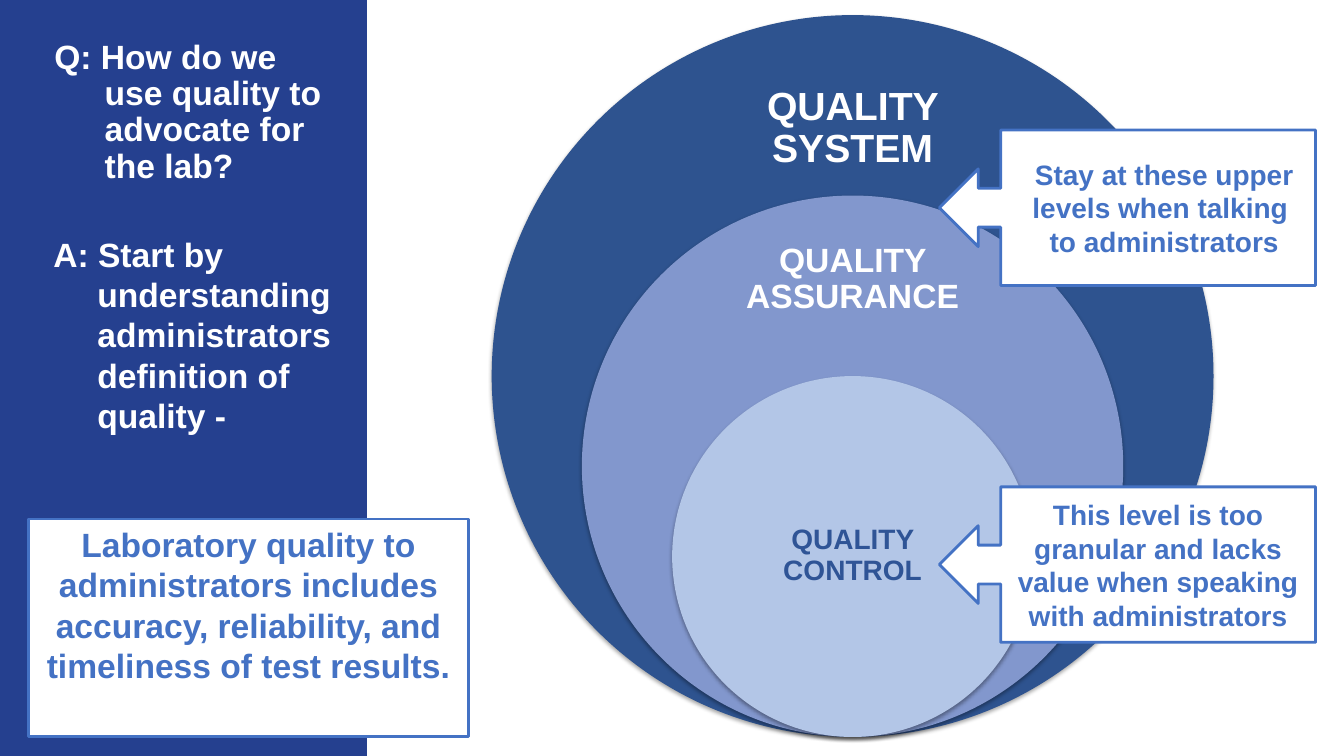
from lxml import etree
from pptx import Presentation, util as u
from pptx.dml.color import RGBColor
from pptx.enum import shapes, text
from pptx.oxml import ns

NAVY = RGBColor(0x25, 0x40, 0x8F)
BLUE = RGBColor(0x44, 0x72, 0xC4)
DEEP = RGBColor(0x2E, 0x53, 0x8F)
PERIWINKLE = RGBColor(0x82, 0x97, 0xCD)
PALE = RGBColor(0xB3, 0xC6, 0xE7)
LABEL_BLUE = RGBColor(0x2F, 0x54, 0x96)
WHITE = RGBColor(0xFF, 0xFF, 0xFF)
BLACK = RGBColor(0, 0, 0)

MIDDLE, TOP = text.MSO_ANCHOR.MIDDLE, text.MSO_ANCHOR.TOP
CENTER, LEFT = text.PP_ALIGN.CENTER, text.PP_ALIGN.LEFT


class SlideBuilder:
    font = "Arial"
    line_width = 2

    def __init__(self, slide):
        self.slide = slide

    def shape(self, kind, box, fill, line=None):
        shape = self.slide.shapes.add_shape(kind, *map(u.Pt, box))
        shape.shadow.inherit = False
        shape.fill.solid()
        shape.fill.fore_color.rgb = fill
        if line is None:
            shape.line.fill.background()
        else:
            shape.line.color.rgb = line
            shape.line.width = u.Pt(self.line_width)
        return shape

    def circle(self, center, bottom, diameter, fill):
        box = (center - diameter / 2, bottom - diameter, diameter, diameter)
        shape = self.shape(shapes.MSO_SHAPE.OVAL, box, fill)
        # Soft shadow straight below
        effects = shape._element.spPr.find(ns.qn("a:effectLst"))
        shadow = etree.SubElement(
            effects, ns.qn("a:outerShdw"), blurRad=str(u.Pt(3.1)),
            dist=str(u.Pt(1.8)), dir="5400000", rotWithShape="0")
        color = etree.SubElement(shadow, ns.qn("a:srgbClr"), val=str(BLACK))
        etree.SubElement(color, ns.qn("a:alpha"), val="34000")

    def callout(self, top):
        shape = self.shape(shapes.MSO_SHAPE.LEFT_ARROW_CALLOUT,
                           (671, top, 268.7, 111), WHITE, BLUE)
        for index, value in enumerate((0.25, 0.25, 0.25, 0.837)):
            shape.adjustments[index] = value
        return shape

    def text_box(self, box, lines, size, color, **style):
        shape = self.slide.shapes.add_textbox(*map(u.Pt, box))
        self.fill_text(shape, lines, size, color, **style)

    def fill_text(self, shape, lines, size, color, align=CENTER, anchor=TOP,
                  insets=(7.2, 3.6), spacing=None, hanging=0):
        frame = shape.text_frame
        frame.word_wrap = True
        frame.vertical_anchor = anchor
        frame.margin_left = frame.margin_right = u.Pt(insets[0])
        frame.margin_top = frame.margin_bottom = u.Pt(insets[1])
        for index, line in enumerate(lines):
            paragraph = frame.add_paragraph() if index else frame.paragraphs[0]
            paragraph.alignment = align
            if spacing:
                paragraph.line_spacing = spacing
            if hanging:
                properties = paragraph._p.get_or_add_pPr()
                properties.set("marL", str(u.Pt(hanging)))
                properties.set("indent", str(-u.Pt(hanging)))
            run = paragraph.add_run()
            run.text = line
            run.font.name = self.font
            run.font.size = u.Pt(size)
            run.font.bold = True
            run.font.color.rgb = color


def main():
    presentation = Presentation()
    presentation.slide_width, presentation.slide_height = u.Pt(960), u.Pt(540)
    slide = presentation.slides.add_slide(presentation.slide_layouts[6])
    builder = SlideBuilder(slide)

    # Side panel with question and answer
    rectangle = shapes.MSO_SHAPE.RECTANGLE
    builder.shape(rectangle, (0, 0, 262, 540), NAVY)
    builder.text_box((31.7, 25.2, 216.7, 132.5),
                     ["Q: How do we use quality to advocate for the lab?"],
                     24, WHITE, align=LEFT, spacing=0.9, hanging=36)
    builder.text_box((31, 163.4, 263, 181.4),
                     ["A: Start by understanding administrators definition of quality -"],
                     24, WHITE, align=LEFT, hanging=31.5)

    # Definition box
    definition = builder.shape(rectangle, (20.2, 370.8, 314.6, 155.5), WHITE, BLUE)
    builder.fill_text(definition,
                      ["Laboratory quality to administrators includes accuracy, "
                       "reliability, and timeliness of test results."], 24, BLUE)

    # Nested circles: common centre line and bottom, labels in the visible band
    center, bottom, outer = 609, 526.4, 515.6
    label_width = 180
    levels = [
        (1, DEEP, "QUALITY SYSTEM", 28, WHITE, 53.3, 77, 15.8),
        (0.75, PERIWINKLE, "QUALITY ASSURANCE", 24, WHITE, 163.4, 72.7, 13.5),
        (0.5, PALE, "QUALITY CONTROL", 20, LABEL_BLUE, 332.6, 128.9, 11.5),
    ]
    for scale, fill, label, size, color, top, height, inset in levels:
        builder.circle(center, bottom, outer * scale, fill)
        builder.text_box((center - label_width / 2, top, label_width, height),
                         [label], size, color, anchor=MIDDLE,
                         insets=(inset, inset), spacing=0.9)

    # Callouts
    builder.callout(92.9)
    builder.text_box((726.5, 108.7, 210.2, 97.2),
                     ["Stay at these upper levels when talking ",
                      "to administrators"], 20, BLUE)
    granular = builder.callout(347.8)
    builder.fill_text(granular,
                      ["This level is too granular and lacks value when speaking "
                       "with administrators"],
                      20, BLUE, anchor=MIDDLE, insets=(7.2, 7.2))

    presentation.save("out.pptx")


if __name__ == "__main__":
    main()
